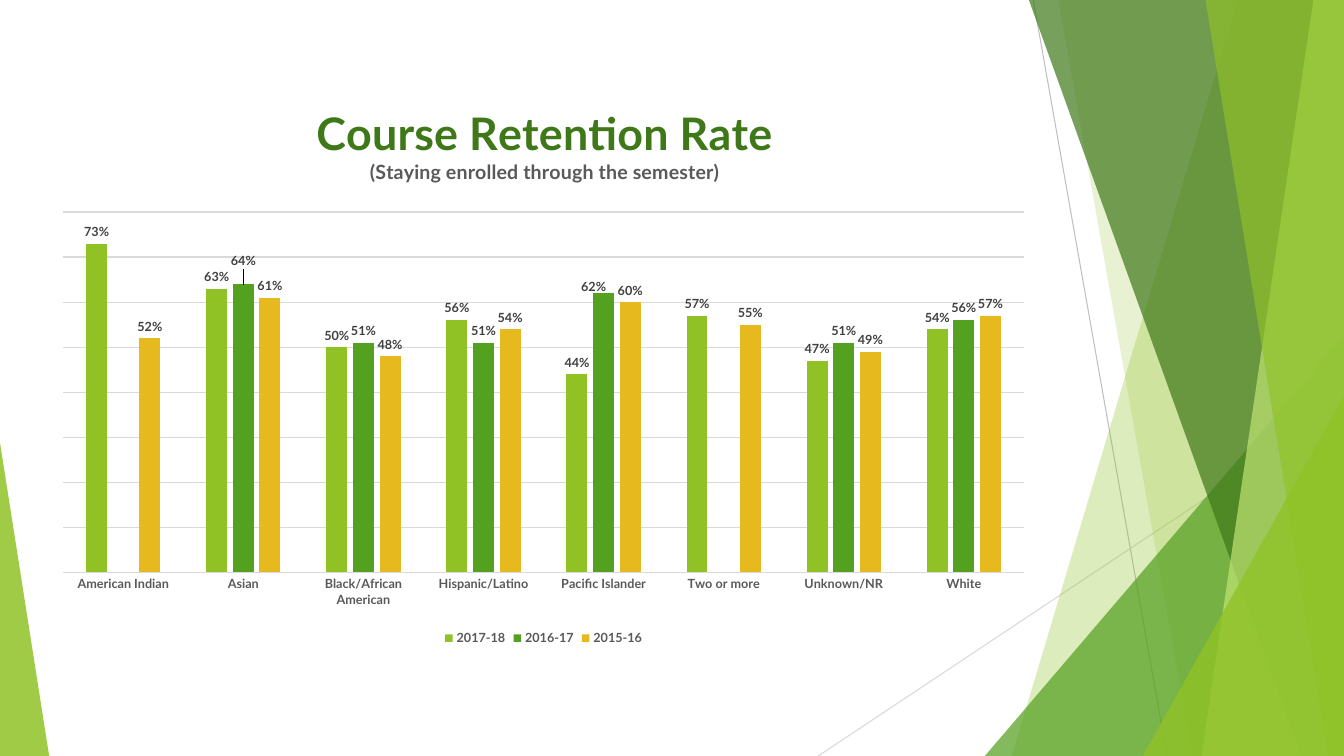
"""Build the course retention rate slide: a clustered column chart on faceted green bands."""
from dataclasses import dataclass

import lxml.etree
import pptx
import pptx.chart.data
import pptx.dml.color
import pptx.enum.chart
import pptx.enum.shapes
import pptx.oxml.ns
import pptx.util

Cm, Pt, qn = pptx.util.Cm, pptx.util.Pt, pptx.oxml.ns.qn
WIDTH, HEIGHT = 33.87, 19.05
FONT = "Lato"


@dataclass
class Line:
    x1: float
    y1: float
    x2: float
    y2: float
    color: str


@dataclass
class Band:
    top_left: float
    bottom_left: float
    color: str
    alpha: int


@dataclass
class Triangle:
    left: float
    top: float
    right: float
    apex: float
    color: str
    alpha: int


@dataclass
class Series:
    name: str
    values: list[float | None]
    color: str


@dataclass
class LabelShift:
    series: int
    point: int
    x: float
    y: float


LINES = [
    Line(26.04, 0, 29.41, HEIGHT, "BFBFBF"),
    Line(WIDTH, 10.24, 20.62, HEIGHT, "D9D9D9"),
]
FACETS = [
    Band(31.19, 25.5, "90C226", 30),
    Band(26.67, 30.05, "90C226", 20),
    Triangle(24.82, 8.46, WIDTH, 1, "54A021", 72),
    Band(25.93, 32.79, "3F7819", 70),
    Band(33.1, 30.28, "C0E474", 70),
    Band(30.38, 33.48, "90C226", 65),
    Triangle(28.8, 9.98, WIDTH, 1, "90C226", 80),
    Triangle(0, 11.15, 1.24, 0, "90C226", 85),
]
CATEGORIES = ["American Indian", "Asian", "Black/African American", "Hispanic/Latino",
              "Pacific Islander", "Two or more", "Unknown/NR", "White"]
SERIES = [
    Series("2017-18", [0.73, 0.63, 0.5, 0.56, 0.44, 0.57, 0.47, 0.54], "90C226"),
    Series("2016-17", [None, 0.64, 0.51, 0.51, 0.62, None, 0.51, 0.56], "54A021"),
    Series("2015-16", [0.52, 0.61, 0.48, 0.54, 0.6, 0.55, 0.49, 0.57], "E6B91E"),
]
LABEL_SHIFTS = [LabelShift(1, 1, 0, -0.02), LabelShift(1, 4, -0.01, 0.01)]


def rgb(color: str) -> pptx.dml.color.RGBColor:
    return pptx.dml.color.RGBColor.from_string(color)


def set_fill(fill, color: str) -> None:
    fill.solid()
    fill.fore_color.rgb = rgb(color)


def set_line(line, color: str) -> None:
    line.color.rgb = rgb(color)
    line.width = Pt(0.75)


def set_font(font, size: float, color: str) -> None:
    font.name, font.size, font.bold = FONT, Pt(size), True
    font.color.rgb = rgb(color)


def draw_line(slide, line: Line) -> None:
    cxn = slide.shapes.add_connector(
        pptx.enum.shapes.MSO_CONNECTOR.STRAIGHT,
        Cm(line.x1), Cm(line.y1), Cm(line.x2), Cm(line.y2))
    set_line(cxn.line, line.color)
    lxml.etree.SubElement(cxn._element.spPr, qn("a:effectLst"))


def draw_facet(slide, facet: Band | Triangle) -> None:
    if isinstance(facet, Band):
        builder = slide.shapes.build_freeform(Cm(facet.top_left), 0)
        corners = [(WIDTH, 0), (WIDTH, HEIGHT), (facet.bottom_left, HEIGHT)]
        builder.add_line_segments([(Cm(x), Cm(y)) for x, y in corners])
        sp = builder.convert_to_shape()
    else:
        sp = slide.shapes.add_shape(
            pptx.enum.shapes.MSO_SHAPE.ISOSCELES_TRIANGLE, Cm(facet.left), Cm(facet.top),
            Cm(facet.right - facet.left), Cm(HEIGHT - facet.top))
        sp.adjustments[0] = facet.apex
    sp.shadow.inherit = False
    set_fill(sp.fill, facet.color)
    color = sp._element.spPr.find(qn("a:solidFill")).find(qn("a:srgbClr"))
    lxml.etree.SubElement(color, qn("a:alpha"), val=str(facet.alpha * 1000))
    sp.line.fill.background()


def set_layout(parent, index: int, **settings: str | float) -> None:
    for old in parent.findall(qn("c:layout")):
        parent.remove(old)
    layout = lxml.etree.Element(qn("c:layout"))
    manual = lxml.etree.SubElement(layout, qn("c:manualLayout"))
    for name, value in settings.items():
        lxml.etree.SubElement(manual, qn(f"c:{name}"), val=str(value))
    parent.insert(index, layout)


def format_title(chart) -> None:
    title = chart.chart_title
    tf = title.text_frame
    tf.text = "Course Retention Rate\n(Staying enrolled through the semester)"
    for p, size, color in zip(tf.paragraphs, (32, 14), ("3F7819", "595959")):
        set_font(p.runs[0].font, size, color)
    set_layout(title._element, 1, xMode="edge", yMode="edge", x=0.27, y=0.01)


def format_axes(chart) -> None:
    axis = chart.category_axis
    axis.major_tick_mark = pptx.enum.chart.XL_TICK_MARK.NONE
    set_font(axis.tick_labels.font, 9, "595959")
    set_line(axis.format.line, "D9D9D9")
    axis = chart.value_axis
    axis.visible = False
    axis.minimum_scale, axis.maximum_scale, axis.major_unit = 0, 0.8, 0.1
    axis.has_major_gridlines = True
    set_line(axis.major_gridlines.format.line, "D9D9D9")


def format_series(plot) -> None:
    plot.gap_width, plot.overlap, plot.vary_by_categories = 219, -27, False
    position = pptx.enum.chart.XL_LABEL_POSITION.OUTSIDE_END
    for ser, item in zip(plot.series, SERIES):
        set_fill(ser.format.fill, item.color)
        labels = ser.data_labels
        labels.show_value = True
        labels.number_format, labels.number_format_is_linked = "0%", False
        labels.position = position
        set_font(labels.font, 9, "404040")
    for shift in LABEL_SHIFTS:
        ser = plot.series[shift.series]
        label = ser.points[shift.point].data_label
        label.position = position
        set_font(label.font, 9, "404040")
        for d_lbl in ser.data_labels._element.findall(qn("c:dLbl")):
            if d_lbl.find(qn("c:idx")).get("val") == str(shift.point):
                set_layout(d_lbl, 1, x=shift.x, y=shift.y)


def draw_chart(slide) -> None:
    data = pptx.chart.data.CategoryChartData(number_format="0%")
    data.categories = CATEGORIES
    for item in SERIES:
        data.add_series(item.name, item.values)
    chart = slide.shapes.add_chart(
        pptx.enum.chart.XL_CHART_TYPE.COLUMN_CLUSTERED,
        Cm(1.09), Cm(2.41), Cm(25.22), Cm(13.97), data).chart
    set_font(chart.font, 9, "000000")
    format_title(chart)
    format_axes(chart)
    format_series(chart.plots[0])
    chart.has_legend = True
    chart.legend.position = pptx.enum.chart.XL_LEGEND_POSITION.BOTTOM
    chart.legend.include_in_layout = False
    set_font(chart.legend.font, 9, "595959")
    plot_area = chart._chartSpace.chart.plotArea
    set_layout(plot_area, 0, layoutTarget="inner", xMode="edge", yMode="edge",
               x=0.02, y=0.21, w=0.96, h=0.65)


def main() -> None:
    prs = pptx.Presentation()
    prs.slide_width, prs.slide_height = Cm(WIDTH), Cm(HEIGHT)
    slide = prs.slides.add_slide(prs.slide_layouts[6])
    for line in LINES:
        draw_line(slide, line)
    for facet in FACETS:
        draw_facet(slide, facet)
    draw_chart(slide)
    prs.save("out.pptx")


if __name__ == "__main__":
    main()
